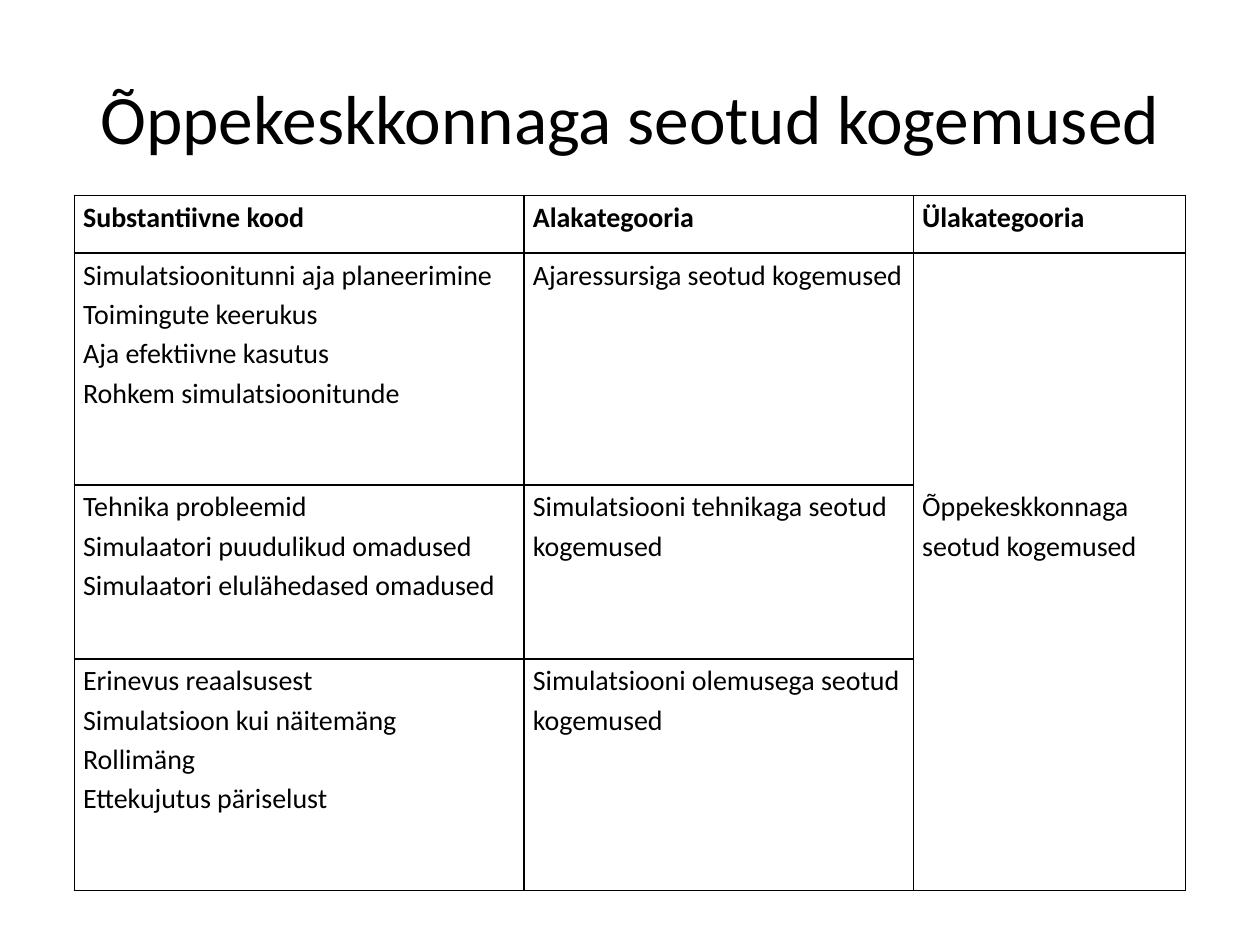
"""Build a slide with a table of codes and categories."""
from dataclasses import dataclass

from lxml.etree import fromstring
from pptx import Presentation
from pptx.dml.color import RGBColor as Color
from pptx.enum.text import MSO_ANCHOR as Anchor, MSO_AUTO_SIZE as Fit, PP_ALIGN as Align
from pptx.oxml.ns import nsdecls
from pptx.util import Inches, Pt


@dataclass(frozen=True)
class Theme:
    font: str = "Calibri"
    ink: str = "000000"
    head: float = 39.6
    text: float = 16
    line: float = 1
    lead: float = 1.15


@dataclass(frozen=True)
class Item:
    lines: tuple[str, ...] = ()
    sides: str = "LRTB"
    bold: bool = False


@dataclass(frozen=True)
class Row:
    units: int
    items: tuple[Item, ...]


THEME = Theme()
WIDE, HIGH = 10, 7.5
LEFT, TOP, UNIT = 0.59, 1.55, 0.46
COLS = (0.357, 0.309, 0.216)
HEADS = ("Substantiivne kood", "Alakategooria", "Ülakategooria")
ROWS = (
    Row(1, tuple(Item((head,), bold=True) for head in HEADS)),
    Row(4, (
        Item(("Simulatsioonitunni aja planeerimine", "Toimingute keerukus",
              "Aja efektiivne kasutus", "Rohkem simulatsioonitunde")),
        Item(("Ajaressursiga seotud kogemused",)),
        Item(sides="LRT"),
    )),
    Row(3, (
        Item(("Tehnika probleemid", "Simulaatori puudulikud omadused",
              "Simulaatori elulähedased omadused")),
        Item(("Simulatsiooni tehnikaga seotud kogemused",)),
        Item(("Õppekeskkonnaga seotud kogemused",), "LR"),
    )),
    Row(4, (
        Item(("Erinevus reaalsusest", "Simulatsioon kui näitemäng",
              "Rollimäng", "Ettekujutus päriselust")),
        Item(("Simulatsiooni olemusega seotud kogemused",)),
        Item(sides="LRB"),
    )),
)


def write(para, text: str, size: float, bold: bool = False) -> None:
    """Add one styled run to a paragraph."""
    run = para.add_run()
    run.text = text
    font = run.font
    font.name, font.size, font.bold = THEME.font, Pt(size), bold
    font.color.rgb = Color.from_string(THEME.ink)


def edge(cell, sides: str) -> None:
    """Draw the named sides of a cell and clear the rest."""
    props = cell._tc.get_or_add_tcPr()
    solid = f'<a:solidFill><a:srgbClr val="{THEME.ink}"/></a:solidFill>'
    for spot, side in enumerate("LRTB"):
        fill = solid if side in sides else "<a:noFill/>"
        props.insert(spot, fromstring(
            f'<a:ln{side} {nsdecls("a")} w="{Pt(THEME.line)}">{fill}</a:ln{side}>'))


def fill_cell(cell, item: Item) -> None:
    """Set the text, margins and borders of a cell."""
    cell.margin_left = cell.margin_right = Inches(0.07)
    cell.margin_top = cell.margin_bottom = 0
    cell.fill.background()
    frame = cell.text_frame
    for spot, line in enumerate(item.lines):
        para = frame.add_paragraph() if spot else frame.paragraphs[0]
        para.line_spacing = THEME.lead
        write(para, line, THEME.text, item.bold)
    edge(cell, item.sides)


def add_title(slide, text: str) -> None:
    """Place and fill the title."""
    title = slide.shapes.title
    title.left, title.top = Inches(WIDE * 0.05), Inches(HIGH * 0.04)
    title.width, title.height = Inches(WIDE * 0.9), Inches(1.25)
    frame = title.text_frame
    frame.auto_size, frame.vertical_anchor = Fit.NONE, Anchor.MIDDLE
    para = frame.paragraphs[0]
    para.alignment = Align.CENTER
    write(para, text, THEME.head)


def add_grid(slide, rows: tuple[Row, ...]) -> None:
    """Add the table on a grid of row units and width shares."""
    high = UNIT * sum(row.units for row in rows)
    table = slide.shapes.add_table(
        len(rows), len(COLS), Inches(LEFT), Inches(TOP),
        Inches(WIDE * sum(COLS)), Inches(high)).table
    table.first_row = table.horz_banding = False
    for col, share in zip(table.columns, COLS):
        col.width = Inches(WIDE * share)
    for line, row in zip(table.rows, rows):
        line.height = Inches(UNIT * row.units)
        for cell, item in zip(line.cells, row.items):
            fill_cell(cell, item)


def main() -> None:
    """Build and save the deck."""
    deck = Presentation()
    deck.slide_width, deck.slide_height = Inches(WIDE), Inches(HIGH)
    slide = deck.slides.add_slide(deck.slide_layouts[5])
    add_title(slide, "Õppekeskkonnaga seotud kogemused")
    add_grid(slide, ROWS)
    deck.save("out.pptx")


if __name__ == "__main__":
    main()
